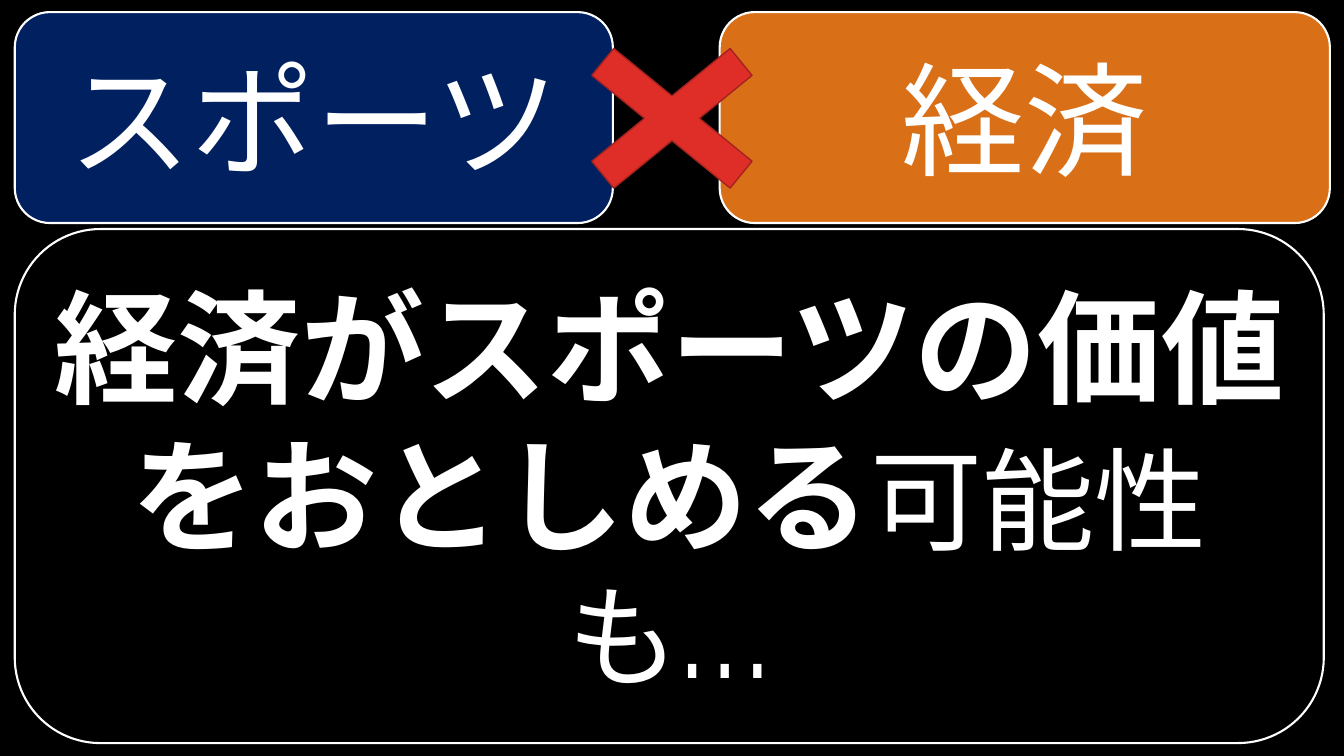
from dataclasses import dataclass

from lxml.etree import SubElement
from pptx import Presentation
from pptx.dml.color import RGBColor
from pptx.enum.lang import MSO_LANGUAGE_ID
from pptx.enum.shapes import MSO_SHAPE
from pptx.enum.text import MSO_ANCHOR, MSO_AUTO_SIZE, PP_ALIGN
from pptx.oxml.ns import qn
from pptx.util import Inches, Pt

WIDTH, HEIGHT = 13.33, 7.5


@dataclass(frozen=True)
class Theme:
    font: str = "TeX Gyre Adventor"
    ground: str = "000000"
    text: str = "FFFFFF"
    sports: str = "002060"
    economy: str = "D96F17"
    cross: str = "DF2E28"
    cross_edge: str = "A5221E"
    large: int = 88
    medium: int = 80
    outline: float = 1.5
    thin: float = 1


class SlideBuilder:
    """Places elements by shares (percent) of the slide's width and height."""

    def __init__(self, deck, theme):
        self.theme = theme
        self.slide = deck.slides.add_slide(deck.slide_layouts[5])
        fill = self.slide.background.fill
        fill.solid()
        fill.fore_color.rgb = RGBColor.from_string(theme.ground)

    def area(self, left, top, width, height):
        return (Inches(left * WIDTH / 100), Inches(top * HEIGHT / 100),
                Inches(width * WIDTH / 100), Inches(height * HEIGHT / 100))

    def shape(self, kind, area, color, edge, weight):
        box = self.slide.shapes.add_shape(kind, *self.area(*area))
        box.shadow.inherit = False
        box.fill.solid()
        box.fill.fore_color.rgb = RGBColor.from_string(color)
        box.line.color.rgb = RGBColor.from_string(edge)
        box.line.width = Pt(weight)
        return box

    def card(self, area, color, text=""):
        box = self.shape(MSO_SHAPE.ROUNDED_RECTANGLE, area, color,
                         self.theme.text, self.theme.outline)
        if text:
            self.set_spans(box, [(text, self.theme.large, False)])

    def cross(self, area):
        box = self.shape(MSO_SHAPE.MATH_MULTIPLY, area, self.theme.cross,
                         self.theme.cross_edge, self.theme.thin)
        box.adjustments[0] = 0.16

    def title(self, area, spans):
        box = self.slide.shapes.title
        box.left, box.top, box.width, box.height = self.area(*area)
        self.set_spans(box, spans)
        # Bring the title in front of its panel
        self.slide.shapes._spTree.append(box._element)

    def set_spans(self, box, spans):
        frame = box.text_frame
        frame.word_wrap = True
        frame.auto_size = MSO_AUTO_SIZE.NONE
        frame.vertical_anchor = MSO_ANCHOR.MIDDLE
        para = frame.paragraphs[0]
        para.alignment = PP_ALIGN.CENTER
        for text, size, bold in spans:
            span = para.add_run()
            span.text = text
            font = span.font
            font.name, font.size, font.bold = self.theme.font, Pt(size), bold
            font.color.rgb = RGBColor.from_string(self.theme.text)
            font.language_id = MSO_LANGUAGE_ID.JAPANESE
            # East Asian letters use the same typeface
            SubElement(span._r.get_or_add_rPr(), qn("a:ea"), typeface=self.theme.font)


def main():
    deck = Presentation()
    deck.slide_width, deck.slide_height = Inches(WIDTH), Inches(HEIGHT)
    theme = Theme()
    page = SlideBuilder(deck, theme)

    # The two subjects and the cross between them
    page.card((1.1, 1.6, 44.5, 27.9), theme.sports, "スポーツ")
    page.card((53.55, 1.6, 45.4, 27.9), theme.economy, "経済")
    page.cross((40.1, 1.3, 19.8, 28.7))

    # Message panel
    page.card((1.1, 30.3, 97.4, 68), theme.ground)
    page.title((3, 33.6, 93.6, 61.4), [
        ("経済がスポーツの価値をおとしめる", theme.large, True),
        ("可能性も…", theme.medium, False),
    ])

    deck.save("out.pptx")


if __name__ == "__main__":
    main()
